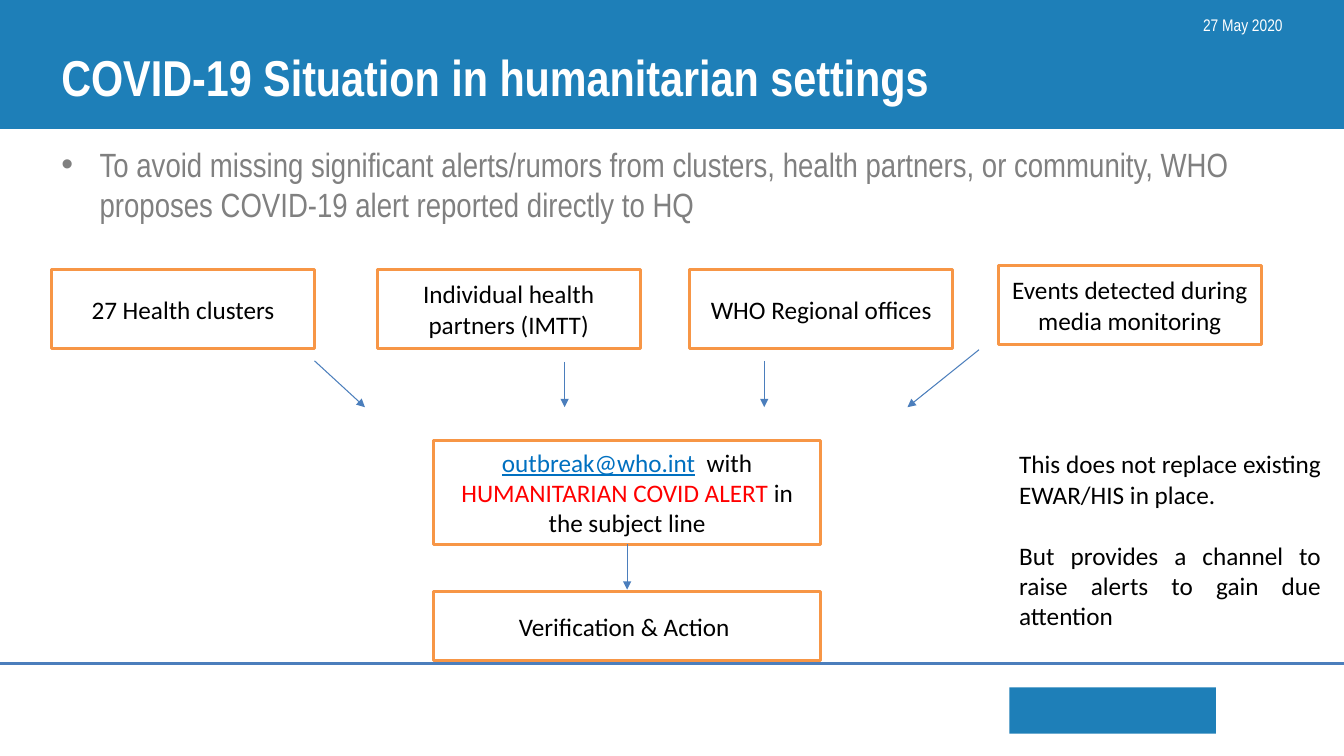
from lxml import etree
from pptx import Presentation
from pptx.dml.color import RGBColor
from pptx.enum.shapes import MSO_CONNECTOR as CONN, MSO_SHAPE as SHAPE
from pptx.enum.text import MSO_ANCHOR as ANCHOR, PP_ALIGN as ALIGN
from pptx.oxml.ns import qn
from pptx.util import Inches, Pt

BANNER_BLUE = RGBColor(0x1E, 0x7F, 0xB8)
LINE_BLUE = RGBColor(0x4B, 0x7E, 0xBC)
LINK_BLUE = RGBColor(0x00, 0x70, 0xC0)
ORANGE = RGBColor(0xF7, 0x96, 0x46)
RED = RGBColor(0xFF, 0x00, 0x00)
GREY = RGBColor(0x80, 0x80, 0x80)
BLACK = RGBColor(0x00, 0x00, 0x00)
WHITE = RGBColor(0xFF, 0xFF, 0xFF)
HEADING_FONT = "Arial Narrow"
BODY_FONT = "Calibri"

SOURCES = [
    (0.51, 2.67, "27 Health clusters"),
    (3.74, 2.67, "Individual health partners (IMTT)"),
    (6.84, 2.67, "WHO Regional offices"),
    (9.9, 2.63, "Events detected during media monitoring"),
]
SOURCE_ARROWS = [
    (3.12, 3.58, 3.62, 4.04),
    (5.6, 3.59, 5.6, 4.04),
    (7.58, 3.58, 7.58, 4.04),
    (9.71, 3.47, 9, 4.04),
]


def set_font(font, name, size, color, bold=False):
    font.name = name
    font.size = Pt(size)
    font.color.rgb = color
    font.bold = bold


def add_rect(s, x, y, w, h, fill, line=None):
    sp = s.shapes.add_shape(SHAPE.RECTANGLE, Inches(x), Inches(y), Inches(w), Inches(h))
    sp.shadow.inherit = False
    sp.fill.solid()
    sp.fill.fore_color.rgb = fill
    if line is None:
        sp.line.fill.background()
    else:
        sp.line.color.rgb = line
        sp.line.width = Pt(2)
    return sp


def add_text(s, x, y, w, h, text, size, color, bold=False, align=ALIGN.LEFT, anchor=ANCHOR.MIDDLE):
    tf = s.shapes.add_textbox(Inches(x), Inches(y), Inches(w), Inches(h)).text_frame
    tf.word_wrap = True
    tf.vertical_anchor = anchor
    p = tf.paragraphs[0]
    p.text = text
    p.alignment = align
    return p, lambda: set_font(p.font, HEADING_FONT, size, color, bold)


def add_label(s, x, y, w, h, text, size, color, bold=False, align=ALIGN.LEFT):
    p, apply_font = add_text(s, x, y, w, h, text, size, color, bold, align)
    apply_font()


def add_bullet(s, x, y, w, h, text):
    p, apply_font = add_text(s, x, y, w, h, text, 24, GREY, anchor=ANCHOR.TOP)
    props = p._p.get_or_add_pPr()
    props.set("marL", str(Inches(0.38)))
    props.set("indent", str(Inches(-0.38)))
    etree.SubElement(props, qn("a:buFont")).set("typeface", "Arial")
    etree.SubElement(props, qn("a:buChar")).set("char", "•")
    apply_font()


def add_line(s, x1, y1, x2, y2, width=0.75, arrow=True):
    line = s.shapes.add_connector(CONN.STRAIGHT, Inches(x1), Inches(y1), Inches(x2), Inches(y2))
    line.line.color.rgb = LINE_BLUE
    line.line.width = Pt(width)
    if arrow:
        etree.SubElement(line.line._get_or_add_ln(), qn("a:tailEnd")).set("type", "triangle")
    etree.SubElement(line._element.spPr, qn("a:effectLst"))


def add_step(s, x, y, w, h, *runs):
    tf = add_rect(s, x, y, w, h, WHITE, ORANGE).text_frame
    tf.word_wrap = True
    tf.vertical_anchor = ANCHOR.MIDDLE
    p = tf.paragraphs[0]
    p.alignment = ALIGN.CENTER
    set_font(p.font, BODY_FONT, 18, BLACK)
    for text, color in runs:
        r = p.add_run()
        r.text = text
        r.font.color.rgb = color
        if color == LINK_BLUE:
            r.font.underline = True


def add_header(s, x, y, w, h):
    add_rect(s, x, y, w, h, BANNER_BLUE)
    add_label(s, x + 0.51, y + 0.16, 12, 1.25, "COVID-19 Situation in humanitarian settings",
              36, WHITE, bold=True)
    add_label(s, x + 9.71, y + 0.08, 3.11, 0.4, "27 May 2020", 12, WHITE, align=ALIGN.RIGHT)


def add_sources(s, w, h):
    for x, y, text in SOURCES:
        add_step(s, x, y, w, h, (text, BLACK))
    for ends in SOURCE_ARROWS:
        add_line(s, *ends)


def add_alert_flow(s, x, y, w):
    add_step(s, x, y, w, 1.03,
             ("outbreak@who.int", LINK_BLUE), ("  with ", BLACK),
             ("HUMANITARIAN COVID ALERT ", RED), ("in the subject line", BLACK))
    add_step(s, x, y + 1.5, w, 0.68, ("Verification & Action ", BLACK))
    add_line(s, x + w / 2, y + 1.03, x + w / 2, y + 1.48)


def add_note(s, x, y, w, h):
    tf = add_rect(s, x, y, w, h, WHITE).text_frame
    tf.word_wrap = True
    tf.vertical_anchor = ANCHOR.MIDDLE
    tf.text = ("This does not replace existing EWAR/HIS in place.\n"
               "But provides a channel to raise alerts to gain due attention")
    for p in tf.paragraphs:
        p.alignment = ALIGN.JUSTIFY
        set_font(p.font, BODY_FONT, 18, BLACK)
    tf.paragraphs[1].space_before = Pt(22)


def add_footer(s, x, y, w):
    add_line(s, x, y, x + w, y, width=2, arrow=False)
    add_rect(s, x + 10.01, y + 0.24, 2.05, 0.46, BANNER_BLUE)


def main():
    prs = Presentation()
    prs.slide_width = Inches(13.33)
    prs.slide_height = Inches(7.5)
    s = prs.slides.add_slide(prs.slide_layouts[6])
    add_footer(s, 0, 6.58, 13.33)
    add_header(s, 0, -0.03, 13.33, 1.31)
    add_bullet(s, 0.51, 1.38, 12.69, 1.1,
               "To avoid missing significant alerts/rumors from clusters, health partners, "
               "or community, WHO proposes COVID-19 alert reported directly to HQ")
    add_sources(s, 2.61, 0.79)
    add_alert_flow(s, 4.3, 4.37, 3.84)
    add_note(s, 10.01, 4.16, 3.19, 2.39)
    prs.save("out.pptx")


if __name__ == "__main__":
    main()
